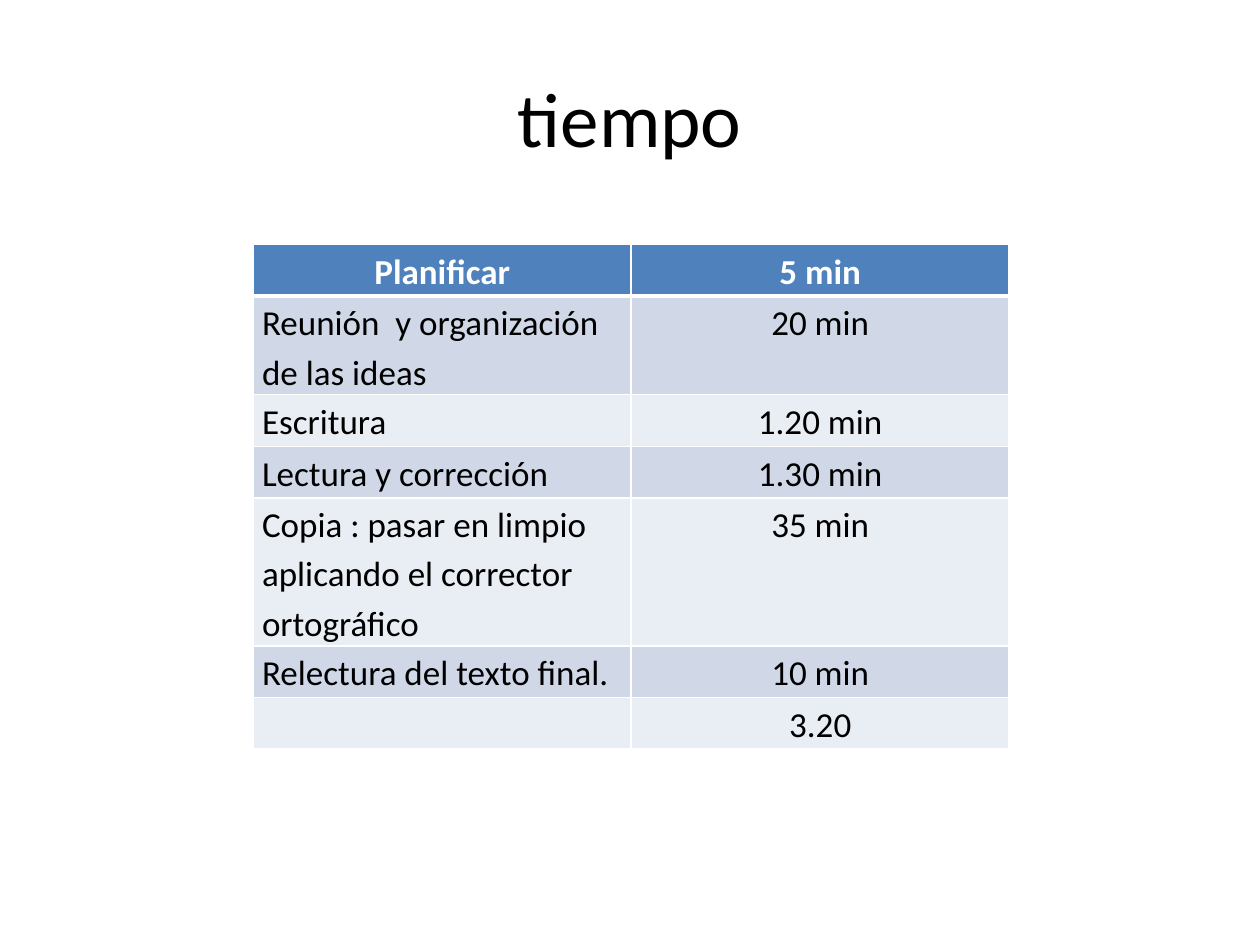
from dataclasses import dataclass

from lxml import etree
from pptx import Presentation
from pptx.dml.color import RGBColor
from pptx.enum.text import MSO_ANCHOR, PP_ALIGN
from pptx.oxml.ns import qn
from pptx.util import Pt

CENTER = PP_ALIGN.CENTER
LEFT = PP_ALIGN.LEFT
MIDDLE = MSO_ANCHOR.MIDDLE

EMU_PER_PX = 9144
EMU_PER_POINT = 12700
TITLE_ONLY = 5


@dataclass(frozen=True)
class Theme:
    font: str = "Calibri"
    title_size: int = 44
    table_size: int = 20
    text: str = "000000"
    header_text: str = "FFFFFF"
    header_fill: str = "4F81BD"
    band_fills: tuple = ("E9EDF4", "D0D8E8")
    border: str = "FFFFFF"
    thin: int = 1
    thick: int = 3


THEME = Theme()

SCHEDULE = [
    ("Planificar", "5 min"),
    ("Reunión  y organización de las ideas", "20 min"),
    ("Escritura", "1.20 min"),
    ("Lectura y corrección", "1.30 min"),
    ("Copia : pasar en limpio aplicando el corrector ortográfico", "35 min"),
    ("Relectura del texto final.", "10 min"),
    ("", "3.20"),
]


def px(length):
    return length * EMU_PER_PX


def format_paragraph(paragraph, size, color, alignment, bold=False):
    paragraph.alignment = alignment
    font = paragraph.font
    font.name = THEME.font
    font.size = Pt(size)
    font.bold = bold
    font.color.rgb = RGBColor.from_string(color)


def add_borders(cell, widths):
    properties = cell._tc.get_or_add_tcPr()
    for side, width in widths.items():
        line = etree.SubElement(properties, qn(f"a:ln{side}"), w=str(width * EMU_PER_POINT))
        fill = etree.SubElement(line, qn("a:solidFill"))
        etree.SubElement(fill, qn("a:srgbClr"), val=THEME.border)


def format_cell(cell, text, row, column):
    header = row == 0
    cell.margin_left = cell.margin_right = px(7)
    cell.margin_top = cell.margin_bottom = 0
    add_borders(cell, {
        "L": THEME.thin,
        "R": THEME.thin,
        "T": THEME.thick if row == 1 else THEME.thin,
        "B": THEME.thick if header else THEME.thin,
    })
    cell.fill.solid()
    fill = THEME.header_fill if header else THEME.band_fills[row % 2]
    cell.fill.fore_color.rgb = RGBColor.from_string(fill)
    cell.text = text
    paragraph = cell.text_frame.paragraphs[0]
    paragraph.line_spacing = 1.15
    color = THEME.header_text if header else THEME.text
    alignment = CENTER if header or column == 1 else LEFT
    format_paragraph(paragraph, THEME.table_size, color, alignment, header)


def place_title(slide, text, left, top, width, height):
    title = slide.shapes.title
    title.left, title.top, title.width, title.height = map(px, (left, top, width, height))
    title.text_frame.text = text
    title.text_frame.vertical_anchor = MIDDLE
    format_paragraph(title.text_frame.paragraphs[0], THEME.title_size, THEME.text, CENTER)


def add_schedule(slide, entries, left, top, width, row_height):
    row_count, column_count = len(entries), len(entries[0])
    table = slide.shapes.add_table(
        row_count, column_count, px(left), px(top), px(width), px(row_height * row_count)
    ).table
    for row, entry in enumerate(entries):
        for column, text in enumerate(entry):
            format_cell(table.cell(row, column), text, row, column)


def main():
    presentation = Presentation()
    presentation.slide_width = px(1000)
    presentation.slide_height = px(750)
    slide = presentation.slides.add_slide(presentation.slide_layouts[TITLE_ONLY])
    place_title(slide, "tiempo", 50, 30, 900, 125)
    add_schedule(slide, SCHEDULE, 201, 194, 600, 41)
    presentation.save("out.pptx")


if __name__ == "__main__":
    main()
